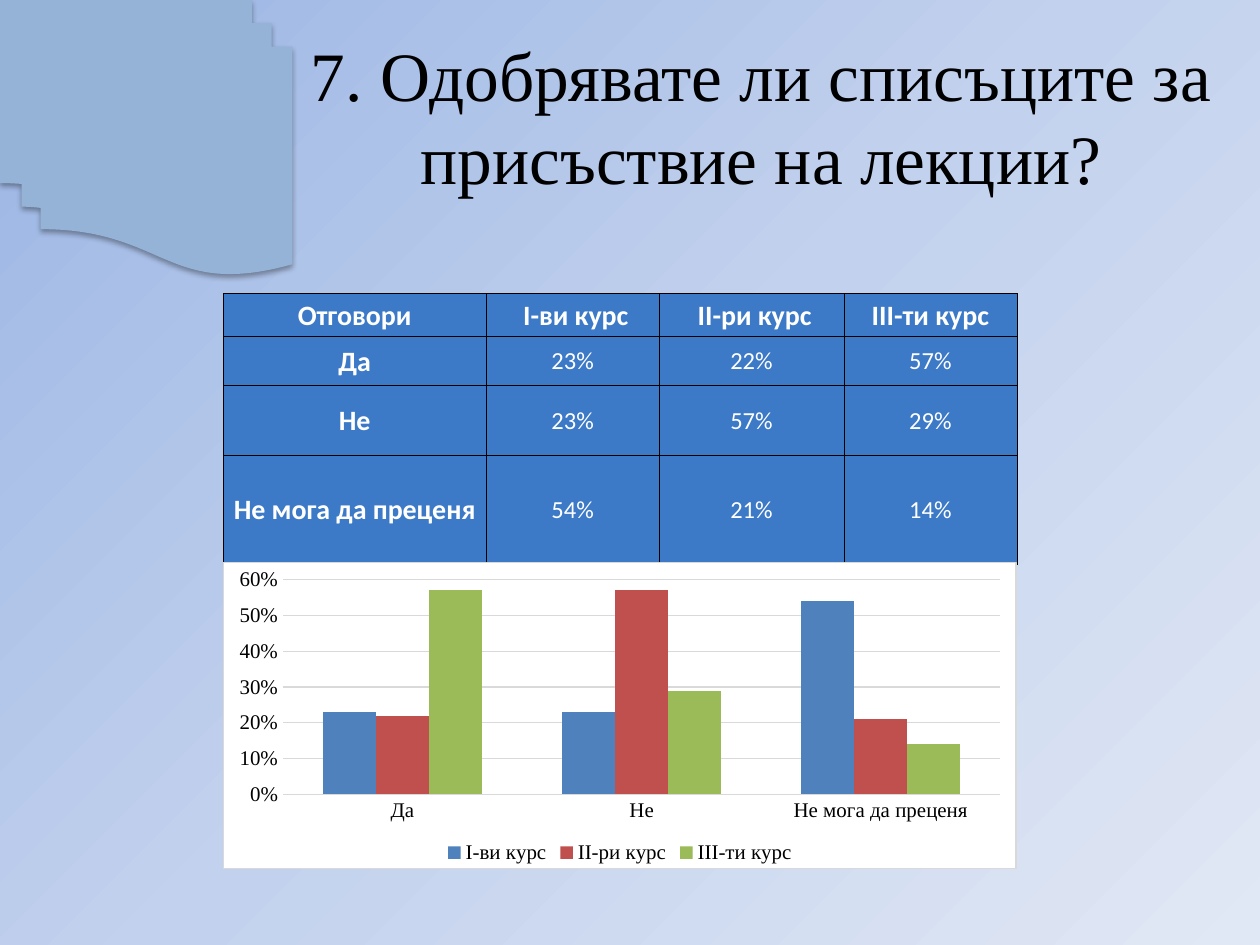
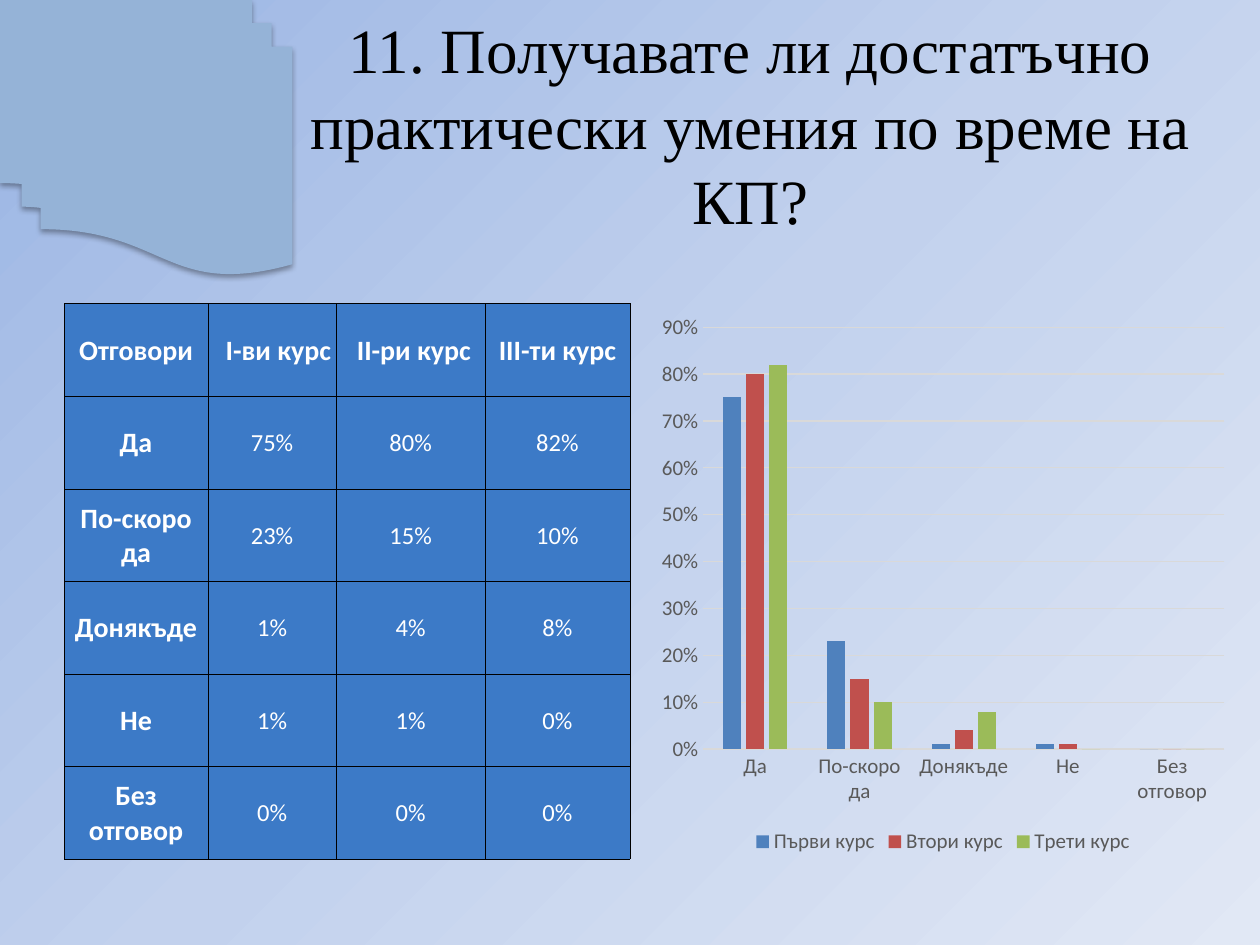
"""Build two survey slides, each with a question, a results table and a column chart."""
from copy import deepcopy
from dataclasses import dataclass
from typing import NamedTuple

from pptx import Presentation
from pptx.chart.axis import CategoryAxis, ValueAxis
from pptx.chart.chart import Chart
from pptx.chart.data import CategoryChartData
from pptx.dml.color import RGBColor
from pptx.dml.fill import FillFormat
from pptx.dml.line import LineFormat
from pptx.enum.chart import XL_CHART_TYPE, XL_LEGEND_POSITION, XL_TICK_MARK
from pptx.enum.shapes import MSO_SHAPE
from pptx.enum.text import MSO_ANCHOR, PP_ALIGN
from pptx.oxml import parse_xml
from pptx.oxml.ns import nsdecls, qn
from pptx.slide import Slide, SlideMaster
from pptx.table import _Cell
from pptx.text.text import Font
from pptx.util import Inches, Length, Pt

COLUMN_CLUSTERED = XL_CHART_TYPE.COLUMN_CLUSTERED
LEGEND_BOTTOM = XL_LEGEND_POSITION.BOTTOM
TICK_NONE = XL_TICK_MARK.NONE
MULTIDOCUMENT = MSO_SHAPE.FLOWCHART_MULTIDOCUMENT
MIDDLE = MSO_ANCHOR.MIDDLE
CENTER = PP_ALIGN.CENTER

SERIF = "Times New Roman"
SANS = "Calibri"
BLACK = "000000"
WHITE = "FFFFFF"
GRAY = "595959"
GRID = "D9D9D9"
CELL_BLUE = "3C7AC7"
PAPER_BLUE = "95B3D7"
GRADIENT = ("9AB5E4", "C2D1ED", "E1E8F5")
SERIES_COLORS = ("4F81BD", "C0504D", "9BBB59")
TABLE_HEADER = ("Отговори", "I-ви курс", "II-ри курс", "III-ти курс")
CELL_MARGIN = 0.01


class Box(NamedTuple):
    """Left, top, width and height in inches."""

    left: float
    top: float
    width: float
    height: float

    def lengths(self) -> tuple[Length, ...]:
        """Return the four measures as lengths."""
        return tuple(Inches(value) for value in self)


@dataclass(frozen=True)
class TableLayout:
    """Place, grid and header indents of a results table."""

    box: Box
    columns: tuple[float, ...]
    rows: tuple[float, ...]
    header_indents: tuple[float, ...]


@dataclass(frozen=True)
class ChartStyle:
    """Place and look of a column chart."""

    box: Box
    font: str
    color: str
    maximum: float
    gap: int
    overlap: int
    framed: bool


@dataclass(frozen=True)
class Survey:
    """One question with its answers and the share of each course."""

    question: str
    question_box: Box
    question_size: float
    answers: dict[str, tuple[float, ...]]
    courses: tuple[str, ...]
    table: TableLayout
    chart: ChartStyle


SURVEYS = (
    Survey(
        "7. Одобрявате ли списъците за присъствие на лекции?",
        Box(1.54, 0.29, 9, 1.25),
        39.6,
        {
            "Да": (0.23, 0.22, 0.57),
            "Не": (0.23, 0.57, 0.29),
            "Не мога да преценя": (0.54, 0.21, 0.14),
        },
        TABLE_HEADER[1:],
        TableLayout(
            Box(1.77, 2.33, 6.3, 2.15),
            (2.09, 1.37, 1.47, 1.37),
            (0.34, 0.39, 0.55, 0.87),
            (0, 0.05, 0.05, 0),
        ),
        ChartStyle(Box(1.77, 4.46, 6.3, 2.44), SERIF, BLACK, 0.6, 150, 0, True),
    ),
    Survey(
        "11. Получавате ли достатъчно практически умения по време на КП?",
        Box(1.91, 0.36, 8.09, 1.25),
        36,
        {
            "Да": (0.75, 0.8, 0.82),
            "По-скоро да": (0.23, 0.15, 0.1),
            "Донякъде": (0.01, 0.04, 0.08),
            "Не": (0.01, 0.01, 0),
            "Без отговор": (0, 0, 0),
        },
        ("Първи курс", "Втори курс", "Трети курс"),
        TableLayout(
            Box(0.51, 2.41, 4.5, 4.41),
            (1.14, 1.02, 1.18, 1.15),
            (0.735,) * 6,
            (0, 0.1, 0.05, 0),
        ),
        ChartStyle(Box(5.16, 2.41, 4.65, 4.41), SANS, GRAY, 0.9, 219, -27, False),
    ),
)


def rgb(color: str) -> RGBColor:
    """Turn a hex string into a colour."""
    return RGBColor.from_string(color)


def set_fill(fill: FillFormat, color: str) -> None:
    """Fill with one colour."""
    fill.solid()
    fill.fore_color.rgb = rgb(color)


def set_font(font: Font, name: str, size: float, color: str, bold: bool = False) -> None:
    """Set face, size, colour and weight of a font."""
    font.name = name
    font.size = Pt(size)
    font.bold = bold
    font.color.rgb = rgb(color)


def set_line(line: LineFormat, color: str) -> None:
    """Draw a thin line in one colour."""
    line.color.rgb = rgb(color)
    line.width = Pt(0.75)


def set_background(master: SlideMaster) -> None:
    """Give the master a diagonal gradient of three colours."""
    fill = master.background.fill
    fill.gradient()
    fill.gradient_angle = 315
    stops = master.element.find(".//" + qn("a:gsLst"))
    stops.insert(1, deepcopy(stops[0]))
    for index, (stop, color) in enumerate(zip(fill.gradient_stops, GRADIENT)):
        stop.position = index / 2
        stop.color.rgb = rgb(color)


def add_paper_stack(slide: Slide) -> None:
    """Draw the mirrored stack of papers in the top left corner."""
    shape = slide.shapes.add_shape(MULTIDOCUMENT, *Box(0, 0, 2.32, 2.18).lengths())
    set_fill(shape.fill, PAPER_BLUE)
    shape.line.fill.background()
    properties = shape.element.spPr
    properties.find(qn("a:xfrm")).set("flipH", "1")
    properties.append(parse_xml(
        f'<a:effectLst {nsdecls("a")}>'
        f'<a:outerShdw blurRad="{Pt(3.1)}" dist="{Pt(1.8)}" dir="5400000" rotWithShape="0">'
        f'<a:srgbClr val="{BLACK}"><a:alpha val="35000"/></a:srgbClr>'
        "</a:outerShdw></a:effectLst>"
    ))


def add_question(slide: Slide, survey: Survey) -> None:
    """Write the question at the top of the slide."""
    frame = slide.shapes.add_textbox(*survey.question_box.lengths()).text_frame
    frame.word_wrap = True
    frame.vertical_anchor = MIDDLE
    paragraph = frame.paragraphs[0]
    paragraph.text = survey.question
    paragraph.alignment = CENTER
    set_font(paragraph.font, SERIF, survey.question_size, BLACK)


def set_cell(cell: _Cell, text: str, heading: bool, indent: float) -> None:
    """Write one bordered table cell."""
    properties = cell._tc.get_or_add_tcPr()
    for side in ("lnL", "lnR", "lnT", "lnB"):
        properties.append(parse_xml(
            f'<a:{side} {nsdecls("a")} w="{Pt(0.25)}"><a:solidFill>'
            f'<a:srgbClr val="{BLACK}"/></a:solidFill></a:{side}>'
        ))
    set_fill(cell.fill, CELL_BLUE)
    cell.vertical_anchor = MIDDLE
    cell.margin_left = Inches(CELL_MARGIN + indent)
    cell.margin_right = cell.margin_top = Inches(CELL_MARGIN)
    cell.margin_bottom = 0
    paragraph = cell.text_frame.paragraphs[0]
    paragraph.text = text
    paragraph.alignment = CENTER
    set_font(paragraph.font, SANS, 16 if heading else 14, WHITE, heading)


def add_results_table(slide: Slide, survey: Survey) -> None:
    """Add the table of answers by course."""
    layout = survey.table
    rows = [TABLE_HEADER]
    rows += [(answer, *(f"{share:.0%}" for share in shares))
             for answer, shares in survey.answers.items()]
    table = slide.shapes.add_table(len(rows), len(TABLE_HEADER), *layout.box.lengths()).table
    table.first_row = table.horz_banding = False
    for column, width in zip(table.columns, layout.columns):
        column.width = Inches(width)
    for row_index, texts in enumerate(rows):
        table.rows[row_index].height = Inches(layout.rows[row_index])
        for column_index, text in enumerate(texts):
            heading = row_index == 0 or column_index == 0
            indent = layout.header_indents[column_index] if row_index == 0 else 0
            set_cell(table.cell(row_index, column_index), text, heading, indent)


def set_chart_area(chart: Chart, framed: bool) -> None:
    """Give the chart a white framed area or leave it clear."""
    if framed:
        area = (f'<a:solidFill><a:srgbClr val="{WHITE}"/></a:solidFill><a:ln w="{Pt(0.75)}">'
                f'<a:solidFill><a:srgbClr val="{GRID}"/></a:solidFill></a:ln>')
    else:
        area = "<a:noFill/><a:ln><a:noFill/></a:ln>"
    properties = parse_xml(f'<c:spPr {nsdecls("c", "a")}>{area}</c:spPr>')
    chart.element.find(qn("c:chart")).addnext(properties)


def set_axis(axis: CategoryAxis | ValueAxis, style: ChartStyle, has_line: bool) -> None:
    """Style the labels and the line of an axis."""
    axis.major_tick_mark = axis.minor_tick_mark = TICK_NONE
    set_font(axis.tick_labels.font, style.font, 12, style.color)
    if has_line:
        set_line(axis.format.line, GRID)
    else:
        axis.format.line.fill.background()


def add_results_chart(slide: Slide, survey: Survey) -> None:
    """Add the column chart of answers by course."""
    style = survey.chart
    data = CategoryChartData(number_format="0%")
    data.categories = list(survey.answers)
    for course, shares in zip(survey.courses, zip(*survey.answers.values())):
        data.add_series(course, shares)
    chart = slide.shapes.add_chart(COLUMN_CLUSTERED, *style.box.lengths(), data).chart
    chart.has_title = False
    set_font(chart.font, SANS, 10, BLACK)
    set_chart_area(chart, style.framed)

    plot = chart.plots[0]
    plot.vary_by_categories = False
    plot.gap_width = style.gap
    plot.overlap = style.overlap
    for series, color in zip(plot.series, SERIES_COLORS):
        set_fill(series.format.fill, color)
        series.invert_if_negative = False

    set_axis(chart.category_axis, style, not style.framed)
    value_axis = chart.value_axis
    set_axis(value_axis, style, False)
    value_axis.minimum_scale, value_axis.maximum_scale = 0, style.maximum
    value_axis.major_unit = 0.1
    value_axis.tick_labels.number_format = "0%"
    value_axis.tick_labels.number_format_is_linked = False
    set_line(value_axis.major_gridlines.format.line, GRID)

    chart.has_legend = True
    chart.legend.position = LEGEND_BOTTOM
    chart.legend.include_in_layout = False
    set_font(chart.legend.font, style.font, 12, style.color)


def main() -> None:
    """Build and save the presentation."""
    presentation = Presentation()
    presentation.slide_width, presentation.slide_height = Inches(10), Inches(7.5)
    set_background(presentation.slide_master)
    for survey in SURVEYS:
        slide = presentation.slides.add_slide(presentation.slide_layouts[6])
        add_paper_stack(slide)
        add_question(slide, survey)
        add_results_table(slide, survey)
        add_results_chart(slide, survey)
    presentation.save("out.pptx")


if __name__ == "__main__":
    main()
